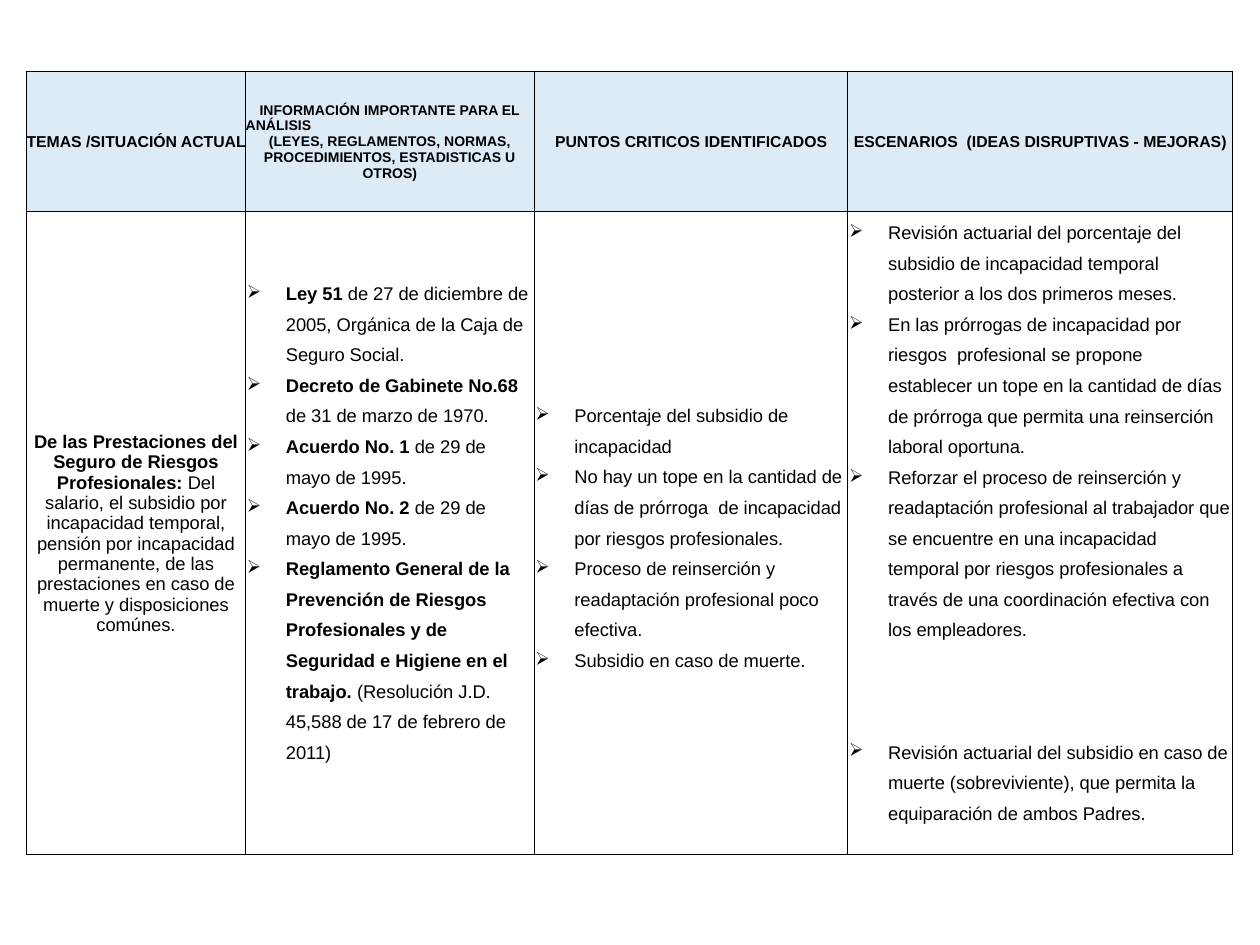
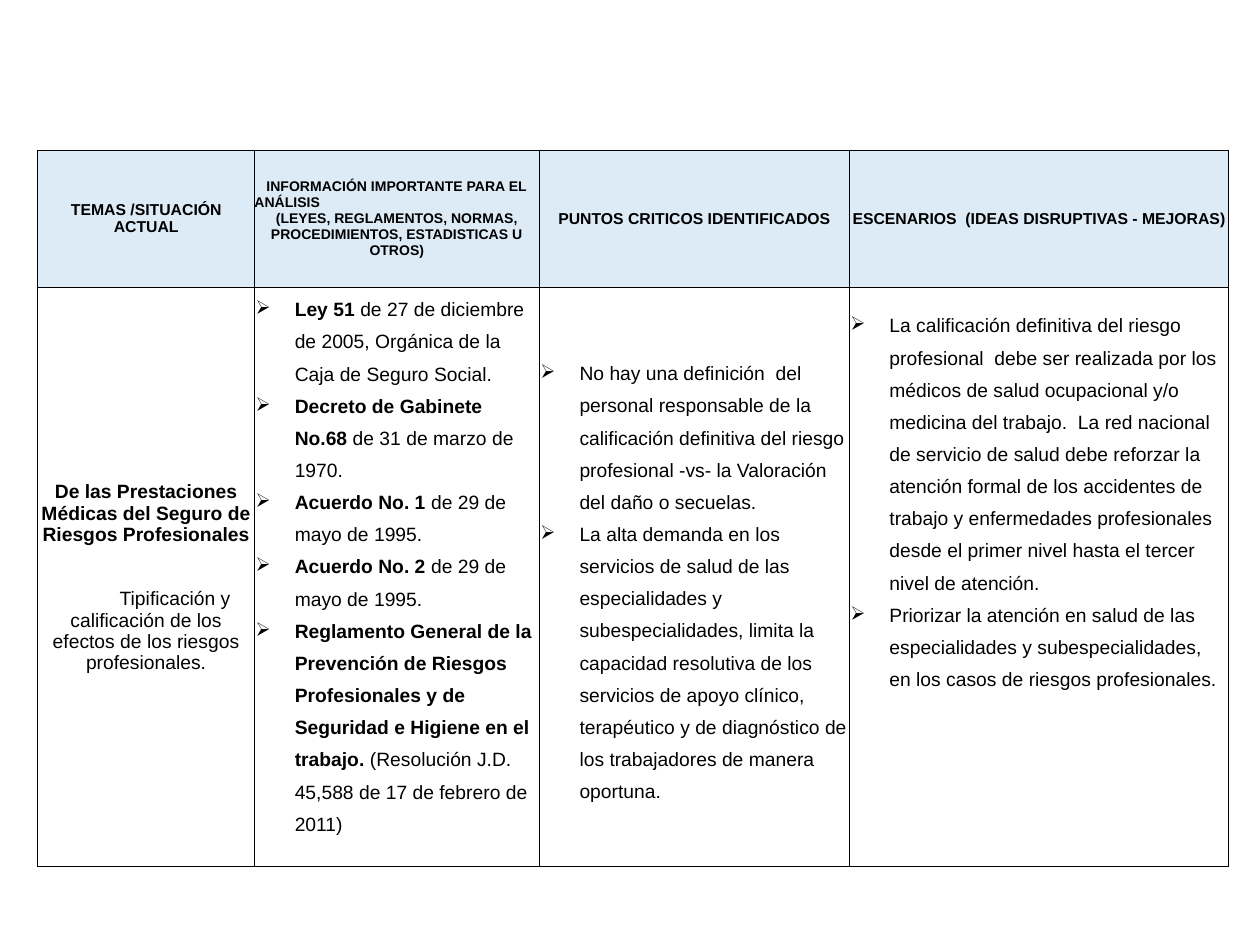
from dataclasses import dataclass
from lxml.etree import SubElement
from pptx import Presentation
from pptx.dml.color import RGBColor
from pptx.enum.text import MSO_ANCHOR, PP_ALIGN
from pptx.oxml.ns import qn
from pptx.util import Inches, Pt


@dataclass(frozen=True)
class Theme:
    """Colours, type sizes and measures that the slides share."""
    font: str = "Arial"
    ink: RGBColor = RGBColor(0, 0, 0)
    band: RGBColor = RGBColor(0xDD, 0xEB, 0xF7)
    head: float = 9
    small: float = 8
    line: float = 0.5
    inset: float = 0.01
    indent: float = 0.31
    leading: float = 1.5
    bullet: str = "➢"


THEME = Theme()
HEADS = [
    ["TEMAS /SITUACIÓN ACTUAL"],
    ["INFORMACIÓN IMPORTANTE PARA EL", "ANÁLISIS",
     "(LEYES, REGLAMENTOS, NORMAS, PROCEDIMIENTOS, ESTADISTICAS U OTROS)"],
    ["PUNTOS CRITICOS IDENTIFICADOS"],
    ["ESCENARIOS  (IDEAS DISRUPTIVAS - MEJORAS)"],
]
LAWS = [
    ("Ley 51 ", "de 27 de diciembre de 2005, Orgánica de la Caja de Seguro Social."),
    ("Decreto de Gabinete No.68", " de 31 de marzo de 1970."),
    ("Acuerdo No. 1 ", "de 29 de mayo de 1995."),
    ("Acuerdo No. 2", " de 29 de mayo de 1995."),
    ("Reglamento General de la Prevención de Riesgos Profesionales y de "
     "Seguridad e Higiene en el trabajo. ",
     "(Resolución J.D. 45,588 de 17 de febrero de 2011)"),
]
PAY_TOPIC = (
    "De las Prestaciones del Seguro de Riesgos Profesionales: ",
    "Del salario, el subsidio por incapacidad temporal, pensión por incapacidad "
    "permanente, de las prestaciones en caso de muerte y disposiciones comúnes.")
PAY_POINTS = [
    "Porcentaje del subsidio de incapacidad",
    "No hay un tope en la cantidad de días de prórroga  de incapacidad por "
    "riesgos profesionales.",
    "Proceso de reinserción y readaptación profesional poco efectiva.",
    "Subsidio en caso de muerte.",
]
PAY_IDEAS = [
    "Revisión actuarial del porcentaje del subsidio de incapacidad temporal "
    "posterior a los dos primeros meses.",
    "En las prórrogas de incapacidad por riesgos  profesional se propone "
    "establecer un tope en la cantidad de días de prórroga que permita una "
    "reinserción laboral oportuna.",
    "Reforzar el proceso de reinserción y readaptación profesional al trabajador "
    "que se encuentre en una incapacidad temporal por riesgos profesionales a "
    "través de una coordinación efectiva con los empleadores.",
    "Revisión actuarial del subsidio en caso de muerte (sobreviviente), que "
    "permita la equiparación de ambos Padres.",
]
CARE_TOPIC = (
    "De las Prestaciones Médicas del Seguro de Riesgos Profesionales",
    "Tipificación y calificación de los efectos de los riesgos profesionales.")
CARE_POINTS = [
    "No hay una definición  del personal responsable de la calificación "
    "definitiva del riesgo profesional -vs- la Valoración del daño o secuelas.",
    "La alta demanda en los servicios de salud de las especialidades y "
    "subespecialidades, limita la capacidad resolutiva de los servicios de apoyo "
    "clínico, terapéutico y de diagnóstico de los trabajadores de manera oportuna.",
]
CARE_IDEAS = [
    "La calificación definitiva del riesgo profesional  debe ser realizada por "
    "los médicos de salud ocupacional y/o medicina del trabajo.  La red nacional "
    "de servicio de salud debe reforzar la atención formal de los accidentes de "
    "trabajo y enfermedades profesionales desde el primer nivel hasta el tercer "
    "nivel de atención.",
    "Priorizar la atención en salud de las  especialidades y subespecialidades, "
    "en los casos de riesgos profesionales.",
]


def add_run(para, text, size, bold=False):
    """Add one run in the theme font."""
    run = para.add_run()
    run.text = text
    run.font.name, run.font.size, run.font.bold = THEME.font, Pt(size), bold
    run.font.color.rgb = THEME.ink


def next_para(cell, first):
    """Give the first paragraph of a cell, or a new one."""
    frame = cell.text_frame
    return frame.paragraphs[0] if first else frame.add_paragraph()


def style_cell(cell, inset, fill=None):
    """Set the margins, border and fill of a cell."""
    cell.vertical_anchor = MSO_ANCHOR.MIDDLE
    cell.margin_left = cell.margin_right = cell.margin_top = Inches(inset)
    cell.margin_bottom = 0
    props = cell._tc.get_or_add_tcPr()
    for side in ("lnL", "lnR", "lnT", "lnB"):
        edge = SubElement(props, qn(f"a:{side}"), w=str(Pt(THEME.line)))
        paint = SubElement(edge, qn("a:solidFill"))
        SubElement(paint, qn("a:srgbClr"), val=str(THEME.ink))
    if fill is None:
        cell.fill.background()
    else:
        cell.fill.solid()
        cell.fill.fore_color.rgb = fill


def fill_head(table):
    """Write the shaded header row."""
    for cell, lines in zip(table.rows[0].cells, HEADS):
        style_cell(cell, 0, THEME.band)
        size = THEME.small if len(lines) > 1 else THEME.head
        for row, text in enumerate(lines):
            para = next_para(cell, row == 0)
            para.alignment = PP_ALIGN.LEFT if text == "ANÁLISIS" else PP_ALIGN.CENTER
            add_run(para, text, size, True)


def fill_topic(cell, topic, size, split):
    """Write the centred topic, with its detail set apart when split."""
    style_cell(cell, THEME.inset)
    para = next_para(cell, True)
    para.alignment = PP_ALIGN.CENTER
    add_run(para, topic[0], size, True)
    if split:
        para = next_para(cell, False)
        para.alignment = PP_ALIGN.CENTER
        para.space_before = Pt(24.3)
        para._p.get_or_add_pPr().set("indent", str(Inches(0.46)))
    add_run(para, topic[1], size)


def fill_list(cell, items, size, tail=0, gaps=None):
    """Write a bulleted list, with room below it and before chosen items."""
    style_cell(cell, THEME.inset)
    cell.margin_bottom = Inches(tail)
    for row, item in enumerate(items):
        para = next_para(cell, row == 0)
        para.line_spacing = THEME.leading
        para.space_before = Pt((gaps or {}).get(row, 0))
        props = para._p.get_or_add_pPr()
        props.set("marL", str(Inches(THEME.indent)))
        props.set("indent", str(-Inches(THEME.indent)))
        SubElement(props, qn("a:buChar"), char=THEME.bullet)
        lead, rest = ("", item) if isinstance(item, str) else item
        if lead:
            add_run(para, lead, size, True)
        add_run(para, rest, size)


def add_grid(deck, left, top, cols, rows):
    """Add a slide with a table and its header, and give the body cells."""
    slide = deck.slides.add_slide(deck.slide_layouts[6])
    table = slide.shapes.add_table(
        len(rows), len(cols), Inches(left), Inches(top),
        Inches(sum(cols)), Inches(sum(rows))).table
    table.first_row = table.horz_banding = False
    for col, width in zip(table.columns, cols):
        col.width = Inches(width)
    for row, height in zip(table.rows, rows):
        row.height = Inches(height)
    fill_head(table)
    return table.rows[1].cells


def add_pay(deck):
    """Build the slide on cash benefits."""
    size = 10.5
    topic, laws, points, ideas = add_grid(
        deck, 0.21, 0.57, [1.74, 2.29, 2.49, 3.05], [1.11, 5.1])
    fill_topic(topic, PAY_TOPIC, size, False)
    fill_list(laws, LAWS, size, 0.24)
    fill_list(points, PAY_POINTS, size)
    fill_list(ideas, PAY_IDEAS, size, 0.24, {3: 52.3})


def add_care(deck):
    """Build the slide on medical benefits."""
    size = 11
    topic, laws, points, ideas = add_grid(
        deck, 0.3, 1.19, [1.72, 2.26, 2.46, 3.01], [1.09, 4.6])
    fill_topic(topic, CARE_TOPIC, size, True)
    fill_list(laws, LAWS, size, 0.25)
    fill_list(points, CARE_POINTS, size)
    fill_list(ideas, CARE_IDEAS, size, 1.27)


def main():
    """Build and save the deck."""
    deck = Presentation()
    deck.slide_width, deck.slide_height = Inches(10), Inches(7.5)
    add_pay(deck)
    add_care(deck)
    deck.save("out.pptx")


if __name__ == "__main__":
    main()
